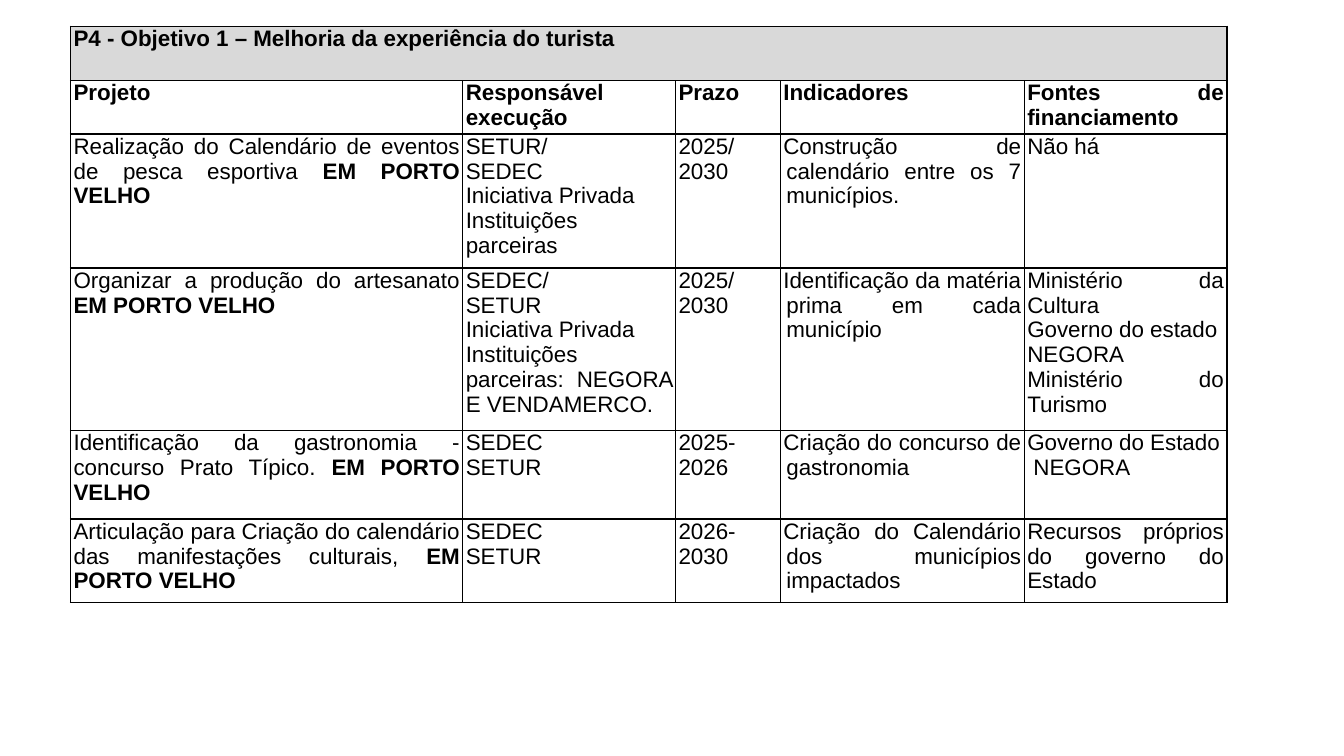
from lxml import etree
from pptx import Presentation
from pptx.dml.color import RGBColor
from pptx.enum.text import PP_ALIGN as Align
from pptx.oxml.ns import qn
from pptx.util import Inches, Pt

BLACK = RGBColor(0x00, 0x00, 0x00)
GRAY = RGBColor(0xD9, 0xD9, 0xD9)
WHITE = RGBColor(0xFF, 0xFF, 0xFF)
PAD = Inches(0.03)

WIDTHS = [3.89, 2.11, 1.04, 2.42, 2.01]
HEIGHTS = [0.54, 0.53, 1.33, 1.61, 0.88, 0.83]
TITLE = "P4 - Objetivo 1 – Melhoria da experiência do turista"
HEADS = ["Projeto", "Responsável execução", "Prazo", "Indicadores",
         "Fontes de financiamento"]
CITY = "EM PORTO VELHO"
ROWS = [
    ["Realização do Calendário de eventos de pesca esportiva ",
     "SETUR/\nSEDEC\nIniciativa Privada\nInstituições parceiras",
     "2025/\n2030",
     "Construção de calendário entre os 7 municípios.",
     "Não há"],
    ["Organizar a produção do artesanato ",
     "SEDEC/\nSETUR\nIniciativa Privada\n"
     "Instituições parceiras: NEGORA E VENDAMERCO.",
     "2025/\n2030",
     "Identificação da matéria prima em cada município",
     "Ministério da Cultura\nGoverno do estado\nNEGORA\n"
     "Ministério do Turismo"],
    ["Identificação da gastronomia - concurso Prato Típico. ",
     "SEDEC\nSETUR",
     "2025-2026",
     "Criação do concurso de gastronomia",
     "Governo do Estado\n NEGORA"],
    ["Articulação para Criação do calendário das manifestações culturais, ",
     "SEDEC\nSETUR",
     "2026-2030",
     "Criação do Calendário dos municípios impactados",
     "Recursos próprios do governo do Estado"],
]


def frame(cell, fill):
    """Give a cell thin black borders, narrow margins and a fill."""
    props = cell._tc.get_or_add_tcPr()
    for side in ("a:lnL", "a:lnR", "a:lnT", "a:lnB"):
        line = etree.SubElement(props, qn(side), w=str(Pt(1)))
        solid = etree.SubElement(line, qn("a:solidFill"))
        etree.SubElement(solid, qn("a:srgbClr"), val=str(BLACK))
    cell.fill.solid()
    cell.fill.fore_color.rgb = fill
    cell.margin_left = cell.margin_right = PAD
    cell.margin_top = cell.margin_bottom = 0


def write(cell, text, bold=False, tail="", hang=False):
    """Fill a cell, one paragraph a line, with an optional bold tail."""
    for i, line in enumerate(text.split("\n")):
        para = cell.text_frame.paragraphs[0] if i == 0 else cell.text_frame.add_paragraph()
        para.alignment = Align.JUSTIFY
        if hang:
            props = para._p.get_or_add_pPr()
            props.set("marL", str(PAD))
            props.set("indent", str(-PAD))
        for part, heavy in ((line, bold), (tail, True)):
            if part:
                run = para.add_run()
                run.text = part
                run.font.name = "Arial"
                run.font.size = Pt(16)
                run.font.bold = heavy
                run.font.color.rgb = BLACK


prs = Presentation()
prs.slide_width = Inches(13.33)
prs.slide_height = Inches(7.5)
slide = prs.slides.add_slide(prs.slide_layouts[6])

shape = slide.shapes.add_table(
    len(HEIGHTS), len(WIDTHS), Inches(0.7), Inches(0.26),
    Inches(sum(WIDTHS)), Inches(sum(HEIGHTS)))
table = shape.table
table.first_row = table.horz_banding = False
for col, width in zip(table.columns, WIDTHS):
    col.width = Inches(width)
for r, height in enumerate(HEIGHTS):
    table.rows[r].height = Inches(height)
    for cell in table.rows[r].cells:
        frame(cell, WHITE if r else GRAY)

table.cell(0, 0).merge(table.cell(0, len(WIDTHS) - 1))
write(table.cell(0, 0), TITLE, bold=True)
for c, head in enumerate(HEADS):
    write(table.cell(1, c), head, bold=True)
for r, row in enumerate(ROWS, 2):
    for c, text in enumerate(row):
        write(table.cell(r, c), text, tail="" if c else CITY, hang=c == 3)

prs.save("out.pptx")
